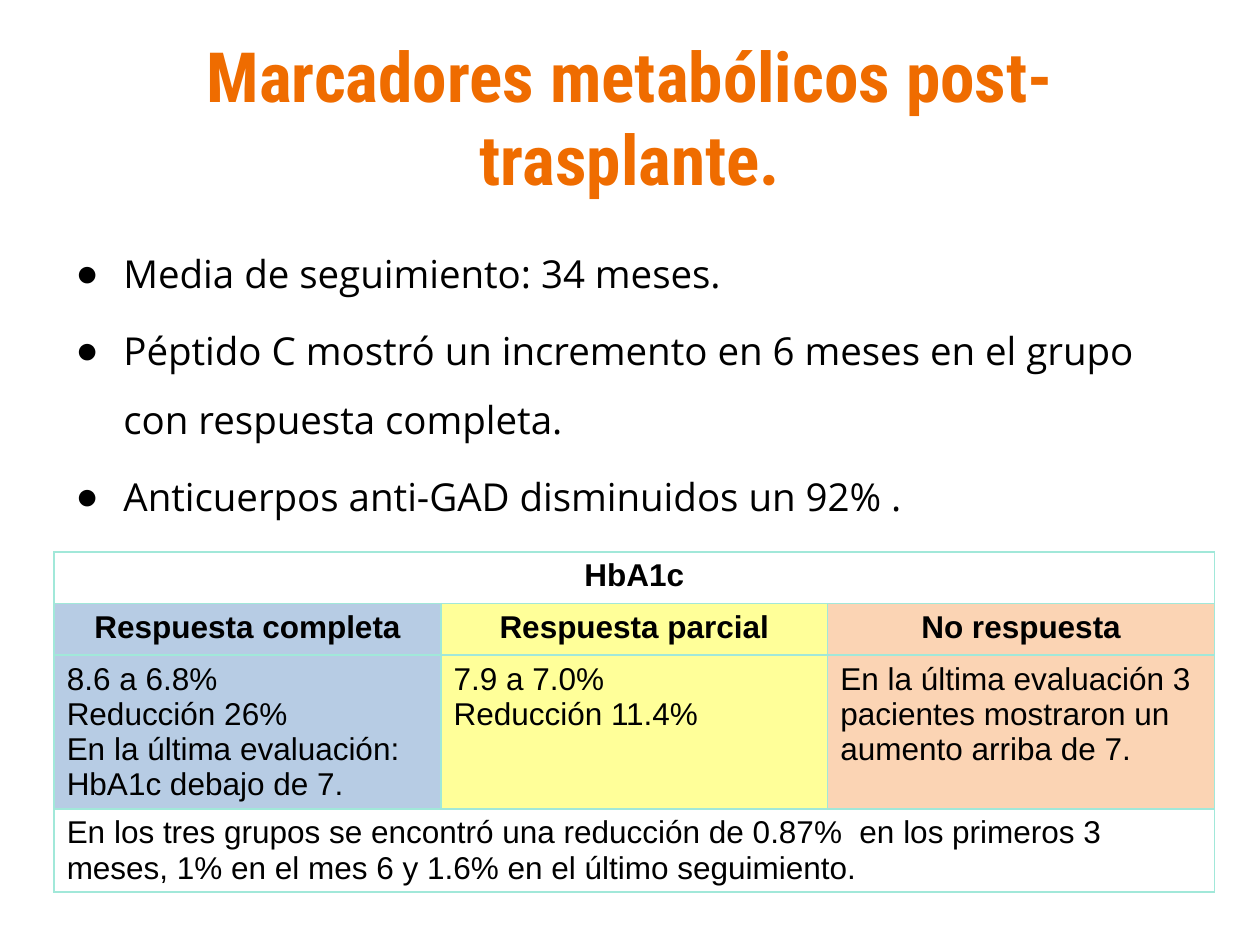
from dataclasses import dataclass

from lxml.etree import SubElement
from pptx import Presentation
from pptx.dml.color import RGBColor
from pptx.enum.text import MSO_ANCHOR, MSO_AUTO_SIZE, PP_ALIGN
from pptx.oxml.ns import qn
from pptx.util import Emu, Pt

PX = 9144
BLACK = RGBColor(0x00, 0x00, 0x00)
WHITE = RGBColor(0xFF, 0xFF, 0xFF)
ORANGE = RGBColor(0xEF, 0x6C, 0x00)
BLUE = RGBColor(0xB7, 0xCC, 0xE4)
YELLOW = RGBColor(0xFF, 0xFF, 0x99)
PEACH = RGBColor(0xFB, 0xD4, 0xB4)
MINT = RGBColor(0xA1, 0xE8, 0xD9)

TITLE = "Marcadores metabólicos post-trasplante."
FINDINGS = [
    "Media de seguimiento: 34 meses.",
    "Péptido C mostró un incremento en 6 meses en el grupo con respuesta completa.",
    "Anticuerpos anti-GAD disminuidos un 92% .",
]
SUMMARY = (
    "En los tres grupos se encontró una reducción de 0.87%  en los primeros 3 meses, "
    "1% en el mes 6 y 1.6% en el último seguimiento."
)
COLUMN_WIDTH = 307
ROW_HEIGHTS = [41, 41, 122, 66]


@dataclass
class ResponseGroup:
    name: str
    results: list[str]
    color: RGBColor


GROUPS = [
    ResponseGroup(
        "Respuesta completa",
        ["8.6 a 6.8%", "Reducción 26%", "En la última evaluación:", "HbA1c debajo de 7."],
        BLUE,
    ),
    ResponseGroup("Respuesta parcial", ["7.9 a 7.0%", "Reducción 11.4%"], YELLOW),
    ResponseGroup(
        "No respuesta",
        ["En la última evaluación 3 pacientes mostraron un aumento arriba de 7."],
        PEACH,
    ),
]


def px(length: int) -> Emu:
    return Emu(length * PX)


def place(placeholder, left: int, top: int, width: int, height: int) -> None:
    placeholder.left, placeholder.top = px(left), px(top)
    placeholder.width, placeholder.height = px(width), px(height)
    placeholder.text_frame.auto_size = MSO_AUTO_SIZE.NONE


def set_font(paragraph, name: str, size: float, color: RGBColor, bold: bool = False) -> None:
    font = paragraph.font
    font.name, font.size, font.bold = name, Pt(size), bold
    font.color.rgb = color


def set_bullet(paragraph) -> None:
    properties = paragraph._p.get_or_add_pPr()
    properties.set("marL", str(px(38)))
    properties.set("indent", str(-px(38)))
    bullet_color = SubElement(properties, qn("a:buClr"))
    SubElement(bullet_color, qn("a:srgbClr")).set("val", str(BLACK))
    SubElement(properties, qn("a:buChar")).set("char", "●")


def set_borders(cell) -> None:
    properties = cell._tc.get_or_add_tcPr()
    for side in ("a:lnL", "a:lnR", "a:lnT", "a:lnB"):
        border = SubElement(properties, qn(side), w=str(Pt(1)))
        stroke = SubElement(border, qn("a:solidFill"))
        SubElement(stroke, qn("a:srgbClr")).set("val", str(MINT))


def fill_cell(cell, lines: list[str], color: RGBColor = WHITE, heading: bool = False) -> None:
    cell.text = "\n".join(lines)
    cell.margin_left = cell.margin_right = px(10)
    cell.margin_top = cell.margin_bottom = px(5)
    for paragraph in cell.text_frame.paragraphs:
        paragraph.alignment = PP_ALIGN.CENTER if heading else PP_ALIGN.LEFT
        set_font(paragraph, "Arial", 18, BLACK, heading)
    cell.fill.solid()
    cell.fill.fore_color.rgb = color


def add_title(slide) -> None:
    title = slide.shapes.title
    place(title, 50, 30, 900, 125)
    title.text_frame.text = TITLE
    title.text_frame.vertical_anchor = MSO_ANCHOR.MIDDLE
    heading = title.text_frame.paragraphs[0]
    heading.alignment = PP_ALIGN.CENTER
    set_font(heading, "Roboto Condensed", 39.6, ORANGE, True)


def add_findings(slide) -> None:
    findings = slide.placeholders[1]
    place(findings, 50, 175, 900, 495)
    findings.text_frame.text = "\n".join(FINDINGS)
    for index, paragraph in enumerate(findings.text_frame.paragraphs):
        paragraph.line_spacing = 1.5
        paragraph.space_before = Pt(4.4 if index else 0)
        set_font(paragraph, "Open Sans", 22, BLACK)
        set_bullet(paragraph)


def add_hba1c_table(slide) -> None:
    table = slide.shapes.add_table(
        len(ROW_HEIGHTS), len(GROUPS), px(43), px(438),
        px(COLUMN_WIDTH * len(GROUPS)), px(sum(ROW_HEIGHTS)),
    ).table
    table.first_row = table.horz_banding = False
    for column in table.columns:
        column.width = px(COLUMN_WIDTH)
    for row, height in zip(table.rows, ROW_HEIGHTS):
        row.height = px(height)
    for cell in table.iter_cells():
        set_borders(cell)
    last_column = len(GROUPS) - 1
    for row in (0, 3):
        table.cell(row, 0).merge(table.cell(row, last_column))
    fill_cell(table.cell(0, 0), ["HbA1c"], heading=True)
    for column, group in enumerate(GROUPS):
        fill_cell(table.cell(1, column), [group.name], group.color, heading=True)
        fill_cell(table.cell(2, column), group.results, group.color)
    fill_cell(table.cell(3, 0), [SUMMARY])


def main() -> None:
    presentation = Presentation()
    presentation.slide_width, presentation.slide_height = px(1000), px(750)
    slide = presentation.slides.add_slide(presentation.slide_layouts[1])
    add_title(slide)
    add_findings(slide)
    add_hba1c_table(slide)
    presentation.save("out.pptx")


if __name__ == "__main__":
    main()
